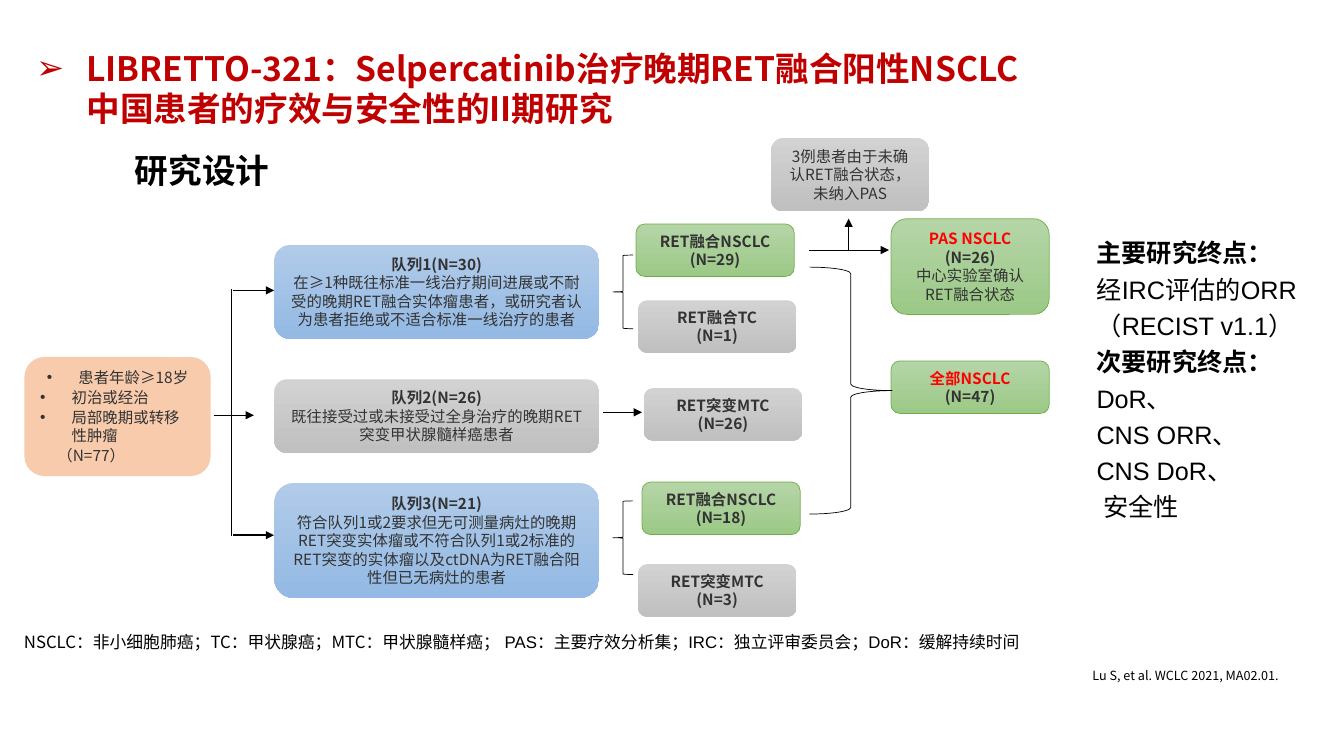
from dataclasses import dataclass, field

import lxml.etree
import pptx
import pptx.dml.color
import pptx.enum.dml
import pptx.enum.shapes
import pptx.enum.text
import pptx.oxml.ns
import pptx.util

Pt = pptx.util.Pt
Kind = pptx.enum.shapes.MSO_SHAPE
Align = pptx.enum.text.PP_ALIGN
Anchor = pptx.enum.text.MSO_ANCHOR
qn = pptx.oxml.ns.qn

NOTO = "Noto Sans CJK SC"
BLUE = ("B1CBE9", "93B9E4")
GRAY = ("D2D2D2", "C0C0C0")
GREEN = ("B5D5A7", "9CC987")
PEACH = ("F8CBAD",)
DARK, RED, BLACK = "333333", "FF0000", "000000"


@dataclass
class Run:
    text: str
    size: float = 11
    color: str = DARK
    bold: bool = False
    name: str = NOTO


@dataclass
class Para:
    runs: list[Run]
    form: dict = field(default_factory=dict)
    left: float = 0
    hang: float = 0
    mark: str = ""


@dataclass
class Box:
    x: float
    y: float
    w: float
    h: float
    paras: list[Para]
    fill: tuple[str, ...] = ()
    wrap: bool = True
    anchor: object = Anchor.TOP


@dataclass
class Arrow:
    x1: float
    y1: float
    x2: float
    y2: float
    width: float = 0.5
    head: bool = True


@dataclass
class Brace:
    kind: object
    x: float
    y: float
    w: float
    h: float
    bend: float


def tint(code: str) -> pptx.dml.color.RGBColor:
    return pptx.dml.color.RGBColor.from_string(code)


def apply(target: object, form: dict) -> None:
    for key, val in form.items():
        setattr(target, key, val)


def stroke(line, code: str, width: float) -> None:
    line.color.rgb = tint(code)
    line.width = Pt(width)


def write(frame, paras: list[Para]) -> None:
    for i, para in enumerate(paras):
        p = frame.paragraphs[0] if i == 0 else frame.add_paragraph()
        props = p._p.get_or_add_pPr()
        props.set("marL", str(Pt(para.left)))
        props.set("indent", str(Pt(-para.hang)))
        if para.mark:
            lxml.etree.SubElement(props, qn("a:buFont")).set("typeface", "Arial")
            lxml.etree.SubElement(props, qn("a:buChar")).set("char", para.mark)
        apply(p, para.form)
        for run in para.runs:
            r = p.add_run()
            r.text = run.text
            apply(r.font, {"size": Pt(run.size), "bold": run.bold, "name": run.name})
            r.font.color.rgb = tint(run.color)
            east = lxml.etree.SubElement(r.font._element, qn("a:ea"))
            east.set("typeface", run.name)


def draw_box(shapes, box: Box) -> None:
    place = [Pt(v) for v in (box.x, box.y, box.w, box.h)]
    if box.fill:
        shape = shapes.add_shape(Kind.ROUNDED_RECTANGLE, *place)
        shape.shadow.inherit = False
        if len(box.fill) == 1:
            shape.fill.solid()
            shape.fill.fore_color.rgb = tint(box.fill[0])
        else:
            shape.fill.gradient()
            shape.fill.gradient_angle = 270
            for stop, code in zip(shape.fill.gradient_stops, box.fill):
                stop.color.rgb = tint(code)
        if box.fill == GREEN:
            stroke(shape.line, "70AD47", 0.5)
        else:
            shape.line.fill.background()
    else:
        shape = shapes.add_textbox(*place)
    apply(shape.text_frame, {"word_wrap": box.wrap, "vertical_anchor": box.anchor})
    write(shape.text_frame, box.paras)


def draw_arrow(shapes, arrow: Arrow) -> None:
    ends = [Pt(v) for v in (arrow.x1, arrow.y1, arrow.x2, arrow.y2)]
    link = shapes.add_connector(pptx.enum.shapes.MSO_CONNECTOR.STRAIGHT, *ends)
    stroke(link.line, BLACK, arrow.width)
    props = link._element.spPr
    if arrow.head:
        lxml.etree.SubElement(props.find(qn("a:ln")), qn("a:tailEnd")).set("type", "triangle")
    lxml.etree.SubElement(props, qn("a:effectLst"))


def draw_brace(shapes, brace: Brace) -> None:
    place = [Pt(v) for v in (brace.x, brace.y, brace.w, brace.h)]
    shape = shapes.add_shape(brace.kind, *place)
    shape.shadow.inherit = False
    shape.fill.background()
    stroke(shape.line, BLACK, 0.5)
    shape.adjustments[0] = brace.bend


def node(x: float, y: float, w: float, h: float, fill: tuple[str, ...], *runs: Run) -> Box:
    paras = [Para([run], {"alignment": Align.CENTER}) for run in runs]
    return Box(x, y, w, h, paras, fill, anchor=Anchor.MIDDLE)


def cohort(y: float, h: float, fill: tuple[str, ...], head: str, body: str) -> Box:
    return node(196, y, 232, h, fill, Run(head, bold=True), Run(body))


def group(x: float, y: float, fill: tuple[str, ...], head: str, count: str,
          color: str = DARK) -> Box:
    return node(x, y, 113, 37.5, fill, Run(head, color=color, bold=True), Run(count, bold=True))


def goal(*runs: tuple[str, bool]) -> Para:
    return Para([Run(text, 18, BLACK, bold, NOTO if bold else "Arial") for text, bold in runs],
                {"line_spacing": 1.2})


def plain(x: float, y: float, w: float, h: float, *runs: Run, wrap: bool = True) -> Box:
    return Box(x, y, w, h, [Para(list(runs))], wrap=wrap)


GAP = {"space_after": Pt(1)}
ENTRY = [Para([Run(text)], GAP, 22.5, 22.5, "•")
         for text in ("患者年龄≥18岁", "初治或经治", "局部晚期或转移性肿瘤")]
ENTRY.append(Para([Run("（N=77）")], GAP, 12.3))
TITLE = Run("LIBRETTO-321：Selpercatinib治疗晚期RET融合阳性NSCLC中国患者的疗效与安全性的II期研究",
            24, "C00000", True)
GOALS = [
    goal(("主要研究终点：", True)),
    goal(("经IRC评估的ORR", False)),
    goal(("（RECIST v1.1）", False), ("次要研究终点：", True), ("DoR、", False)),
    goal(("CNS ORR、", False)),
    goal(("CNS DoR、", False)),
    goal((" 安全性", False)),
]

BOXES = [
    Box(18.7, 30.2, 734.4, 65.5, [Para([TITLE], {}, 36, 36, "➢")], anchor=Anchor.MIDDLE),
    Box(17.5, 255, 133, 85, ENTRY, PEACH, anchor=Anchor.MIDDLE),
    cohort(175, 67, BLUE, "队列1(N=30)", "在≥1种既往标准一线治疗期间进展或不耐受的晚期RET融合实体瘤患者，或研究者认为患者拒绝或不适合标准一线治疗的患者"),
    cohort(271, 52.5, GRAY, "队列2(N=26)", "既往接受过或未接受过全身治疗的晚期RET突变甲状腺髓样癌患者"),
    cohort(345, 82, BLUE, "队列3(N=21)", "符合队列1或2要求但无可测量病灶的晚期RET突变实体瘤或不符合队列1或2标准的RET突变的实体瘤以及ctDNA为RET融合阳性但已无病灶的患者"),
    group(454.3, 160, GREEN, "RET融合NSCLC", "(N=29)"),
    group(455.8, 214.5, GRAY, "RET融合TC", "(N=1)"),
    group(460, 277.2, GRAY, "RET突变MTC", "(N=26)"),
    group(458.6, 344.3, GREEN, "RET融合NSCLC", "(N=18)"),
    group(455.8, 403, GRAY, "RET突变MTC", "(N=3)"),
    node(550.8, 98.6, 113, 52.5, GRAY, Run("3例患者由于未确认RET融合状态，未纳入PAS")),
    node(636.5, 156.2, 113, 68.4, GREEN, Run("PAS NSCLC", color=RED, bold=True),
         Run("(N=26)", bold=True), Run("中心实验室确认RET融合状态")),
    group(636.5, 257.8, GREEN, "全部NSCLC", "(N=47)", RED),
    plain(10, 447.8, 751, 21.6,
          Run("NSCLC：非小细胞肺癌；TC：甲状腺癌；MTC：甲状腺髓样癌；", 12, BLACK),
          Run(" PAS：主要疗效分析集；IRC：独立评审委员会；DoR：缓解持续时间", 12, BLACK, name="Arial")),
    plain(773.3, 473.8, 162.7, 18, Run("Lu S, et al. WCLC 2021, MA02.01.", 9, BLACK), wrap=False),
    Box(776.2, 162, 162.7, 216.7, GOALS),
    plain(89.3, 103.7, 140.4, 36, Run("研究设计", 24, BLACK, True)),
]

ARROWS = [
    Arrow(165.6, 206.6, 165.6, 383, head=False),
    Arrow(152.6, 296.6, 181.4, 296.6),
    Arrow(166.3, 207.4, 195.8, 207.4, 1),
    Arrow(166.3, 382.3, 195.8, 382.3, 1),
    Arrow(430.6, 294.5, 458.6, 294.5),
    Arrow(578.2, 178.6, 635, 178.6),
    Arrow(606.2, 178.6, 606.2, 156.2),
]

BRACES = [
    Brace(Kind.LEFT_BRACE, 437.8, 182.2, 14.4, 52.6, 0.03),
    Brace(Kind.LEFT_BRACE, 437.8, 357.8, 14.4, 52.6, 0.03),
    Brace(Kind.RIGHT_BRACE, 578.2, 190.8, 59, 176.4, 0.08),
]


def main() -> None:
    deck = pptx.Presentation()
    apply(deck, {"slide_width": Pt(960), "slide_height": Pt(540)})
    shapes = deck.slides.add_slide(deck.slide_layouts[6]).shapes
    for draw, items in ((draw_box, BOXES), (draw_arrow, ARROWS), (draw_brace, BRACES)):
        for item in items:
            draw(shapes, item)
    deck.save("out.pptx")


if __name__ == "__main__":
    main()
